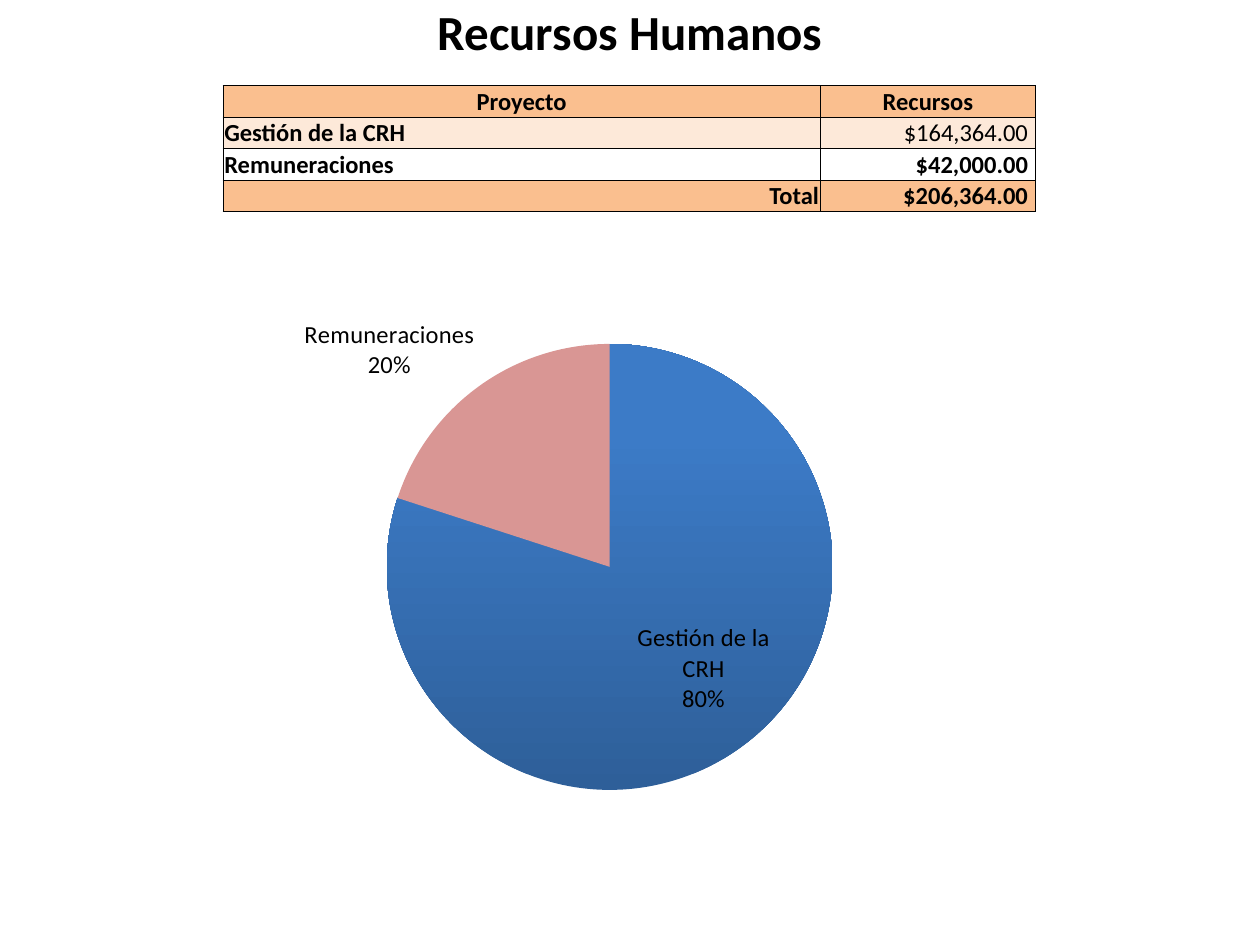
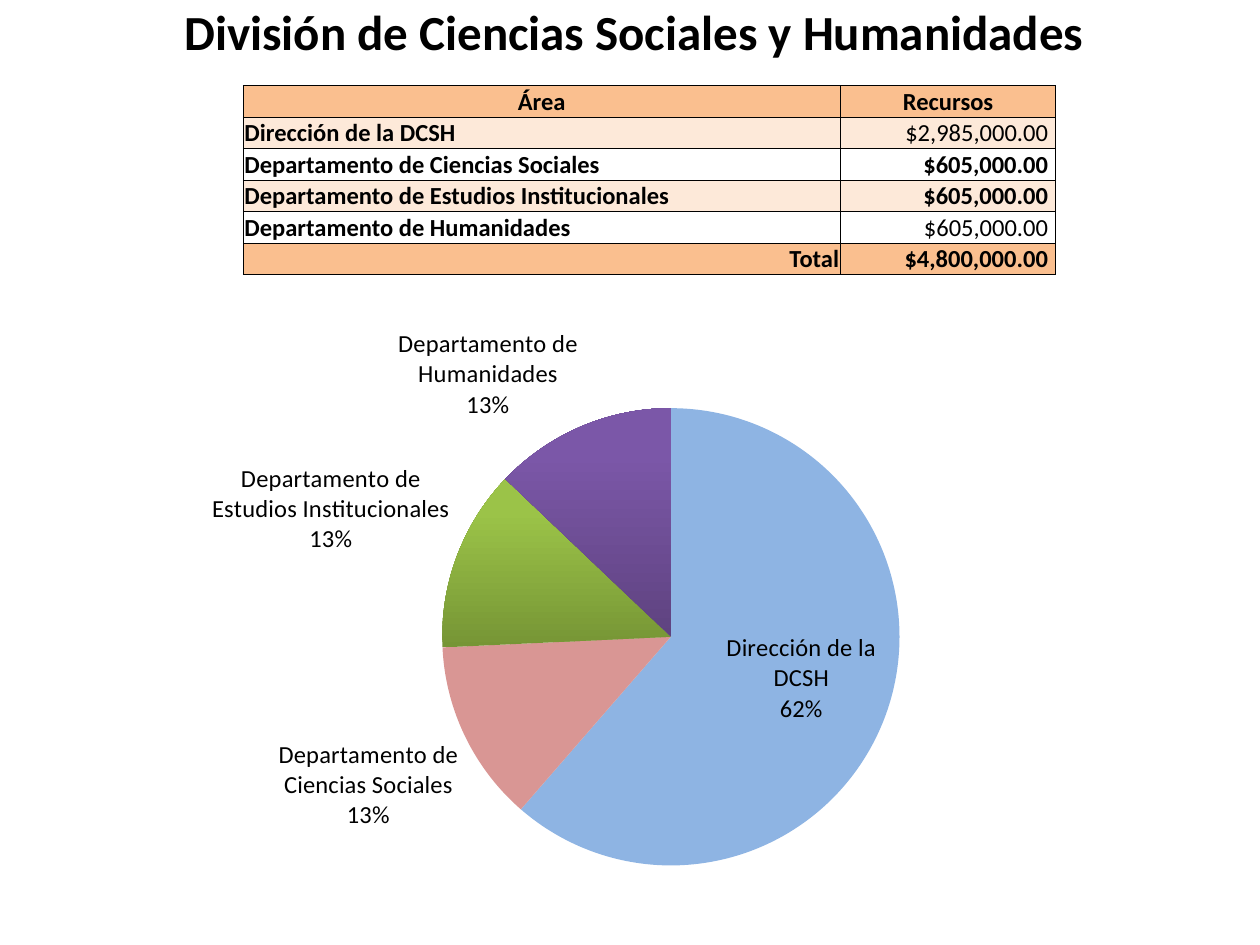
"""Two budget slides, each with a table of resources and a pie of its shares."""
from dataclasses import dataclass
from typing import Optional

from lxml import etree
from pptx import Presentation
from pptx import util as u
from pptx.chart import data as chart_data
from pptx.dml.color import RGBColor
from pptx.enum import chart as chart_enum
from pptx.enum import text
from pptx.oxml import ns

FONT = "Calibri"
BLACK = RGBColor(0x00, 0x00, 0x00)
ORANGE = RGBColor(0xFA, 0xBF, 0x8F)
PEACH = RGBColor(0xFD, 0xE9, 0xD9)
SKY = RGBColor(0x8E, 0xB4, 0xE3)
ROSE = RGBColor(0xD9, 0x96, 0x94)
BLUE = (RGBColor(0x2E, 0x5F, 0x99), RGBColor(0x3C, 0x7B, 0xC7))
GREEN = (RGBColor(0x76, 0x95, 0x35), RGBColor(0x9B, 0xC3, 0x48))
PURPLE = (RGBColor(0x5F, 0x43, 0x80), RGBColor(0x7B, 0x57, 0xA8))

COLUMN_WIDTHS = (u.Inches(4.74), u.Inches(1.71))
ROW_HEIGHT = u.Inches(0.25)
TABLE_TOP = u.Inches(0.68)
CELL_INSET = u.Inches(0.01)
AMOUNT_INSET = u.Inches(0.06)
LEFT, CENTER, RIGHT = text.PP_ALIGN.LEFT, text.PP_ALIGN.CENTER, text.PP_ALIGN.RIGHT


@dataclass
class Share:
    name: str
    amount: int
    slice_fill: object
    bold_amount: bool = False


@dataclass
class Box:
    left: float
    top: float
    width: float
    height: float

    def lengths(self) -> list:
        return [u.Inches(v) for v in (self.left, self.top, self.width, self.height)]


@dataclass
class Budget:
    title: str
    heading: str
    title_left: float
    table_left: float
    chart: Box
    pie: Box
    shares: list

    def total(self) -> int:
        return sum(share.amount for share in self.shares)


BUDGETS = [
    Budget(
        "Recursos Humanos", "Proyecto", 0.59, 1.77,
        Box(0.28, 2.25, 9.21, 4.49), Box(3.07, 2.73, 3.54, 3.54),
        [
            Share("Gestión de la CRH", 164364, BLUE),
            Share("Remuneraciones", 42000, ROSE, True),
        ],
    ),
    Budget(
        "División de Ciencias Sociales y Humanidades", "Área", 0.62, 1.93,
        Box(0.12, 2.41, 9.72, 4.73), Box(3.51, 3.24, 3.63, 3.63),
        [
            Share("Dirección de la DCSH", 2985000, SKY),
            Share("Departamento de Ciencias Sociales", 605000, ROSE, True),
            Share("Departamento de Estudios Institucionales", 605000, GREEN, True),
            Share("Departamento de Humanidades", 605000, PURPLE),
        ],
    ),
]


def set_font(font, size: float, bold: bool = False) -> None:
    font.name = FONT
    font.size = u.Pt(size)
    font.bold = bold
    font.color.rgb = BLACK


def add_title(slide, budget: Budget) -> None:
    title = slide.shapes.title
    title.left, title.top, title.width, title.height = Box(
        budget.title_left, -0.16, 8.82, 0.68).lengths()
    frame = title.text_frame
    frame.word_wrap = True
    frame.auto_size = text.MSO_AUTO_SIZE.SHAPE_TO_FIT_TEXT
    frame.vertical_anchor = text.MSO_ANCHOR.MIDDLE
    frame.margin_left = frame.margin_right = u.Inches(0.1)
    frame.margin_top, frame.margin_bottom = u.Inches(0.17), u.Inches(0.04)
    paragraph = frame.paragraphs[0]
    paragraph.alignment = CENTER
    run = paragraph.add_run()
    run.text = budget.title
    set_font(run.font, 28, True)


def add_borders(cell) -> None:
    properties = cell._tc.get_or_add_tcPr()
    for side in ("a:lnL", "a:lnR", "a:lnT", "a:lnB"):
        line = etree.SubElement(properties, ns.qn(side), w=str(u.Pt(0.5)))
        solid = etree.SubElement(line, ns.qn("a:solidFill"))
        etree.SubElement(solid, ns.qn("a:srgbClr"), val=str(BLACK))


def fill_cell(cell, words: str, alignment, bold: bool, color: Optional[RGBColor],
              right_inset=CELL_INSET) -> None:
    cell.margin_left = cell.margin_top = CELL_INSET
    cell.margin_right, cell.margin_bottom = right_inset, 0
    cell.vertical_anchor = text.MSO_ANCHOR.MIDDLE
    add_borders(cell)
    if color is None:
        cell.fill.background()
    else:
        cell.fill.solid()
        cell.fill.fore_color.rgb = color
    paragraph = cell.text_frame.paragraphs[0]
    paragraph.alignment = alignment
    run = paragraph.add_run()
    run.text = words
    set_font(run.font, 14, bold)


def add_budget_table(slide, budget: Budget) -> None:
    row_count = len(budget.shares) + 2
    table = slide.shapes.add_table(
        row_count, 2, u.Inches(budget.table_left), TABLE_TOP,
        sum(COLUMN_WIDTHS), ROW_HEIGHT * row_count).table
    for column, width in zip(table.columns, COLUMN_WIDTHS):
        column.width = width
    for row in table.rows:
        row.height = ROW_HEIGHT

    fill_cell(table.cell(0, 0), budget.heading, CENTER, True, ORANGE)
    fill_cell(table.cell(0, 1), "Recursos", CENTER, True, ORANGE)
    total = Share("Total", budget.total(), None, True)
    for row, share in enumerate(budget.shares + [total], start=1):
        color = ORANGE if share is total else PEACH if row % 2 else None
        fill_cell(table.cell(row, 0), share.name, RIGHT if share is total else LEFT,
                  True, color)
        fill_cell(table.cell(row, 1), f"${share.amount:,.2f}", RIGHT,
                  share.bold_amount, color, AMOUNT_INSET)


def paint_slice(point, slice_fill) -> None:
    fill = point.format.fill
    if isinstance(slice_fill, RGBColor):
        fill.solid()
        fill.fore_color.rgb = slice_fill
    else:
        fill.gradient()
        fill.gradient_angle = 90
        for stop, color, position in zip(fill.gradient_stops, slice_fill, (0, 0.8)):
            stop.color.rgb = color
            stop.position = position
    point.format.line.fill.background()


def place_pie(chart, frame: Box, pie: Box) -> None:
    plot_area = chart._chartSpace.chart.plotArea
    for old in plot_area.findall(ns.qn("c:layout")):
        plot_area.remove(old)
    layout = etree.Element(ns.qn("c:layout"))
    manual = etree.SubElement(layout, ns.qn("c:manualLayout"))
    settings = {
        "layoutTarget": "inner", "xMode": "edge", "yMode": "edge",
        "x": (pie.left - frame.left) / frame.width,
        "y": (pie.top - frame.top) / frame.height,
        "w": pie.width / frame.width,
        "h": pie.height / frame.height,
    }
    for tag, value in settings.items():
        etree.SubElement(manual, ns.qn(f"c:{tag}"), val=str(value))
    plot_area.insert(0, layout)


def add_pie(slide, budget: Budget) -> None:
    data = chart_data.CategoryChartData()
    data.categories = [share.name for share in budget.shares]
    data.add_series("Recursos", [round(100 * share.amount / budget.total())
                                 for share in budget.shares])
    chart = slide.shapes.add_chart(
        chart_enum.XL_CHART_TYPE.PIE, *budget.chart.lengths(), data).chart
    chart.has_title = chart.has_legend = False
    set_font(chart.font, 10)
    plot = chart.plots[0]
    plot.vary_by_categories = True
    series = plot.series[0]
    for index, share in enumerate(budget.shares):
        paint_slice(series.points[index], share.slice_fill)

    labels = series.data_labels
    labels.show_category_name = labels.show_value = True
    labels.show_percentage = False
    labels.number_format, labels.number_format_is_linked = '0"%"', False
    labels.position = chart_enum.XL_LABEL_POSITION.BEST_FIT
    set_font(labels.font, 14)
    separator = etree.Element(ns.qn("c:separator"))
    separator.text = "\n"
    labels._element.find(ns.qn("c:showBubbleSize")).addnext(separator)
    place_pie(chart, budget.chart, budget.pie)


def main() -> None:
    deck = Presentation()
    deck.slide_width, deck.slide_height = u.Inches(10), u.Inches(7.5)
    title_only = deck.slide_layouts[5]
    for budget in BUDGETS:
        slide = deck.slides.add_slide(title_only)
        add_budget_table(slide, budget)
        add_title(slide, budget)
        add_pie(slide, budget)
    deck.save("out.pptx")


if __name__ == "__main__":
    main()
